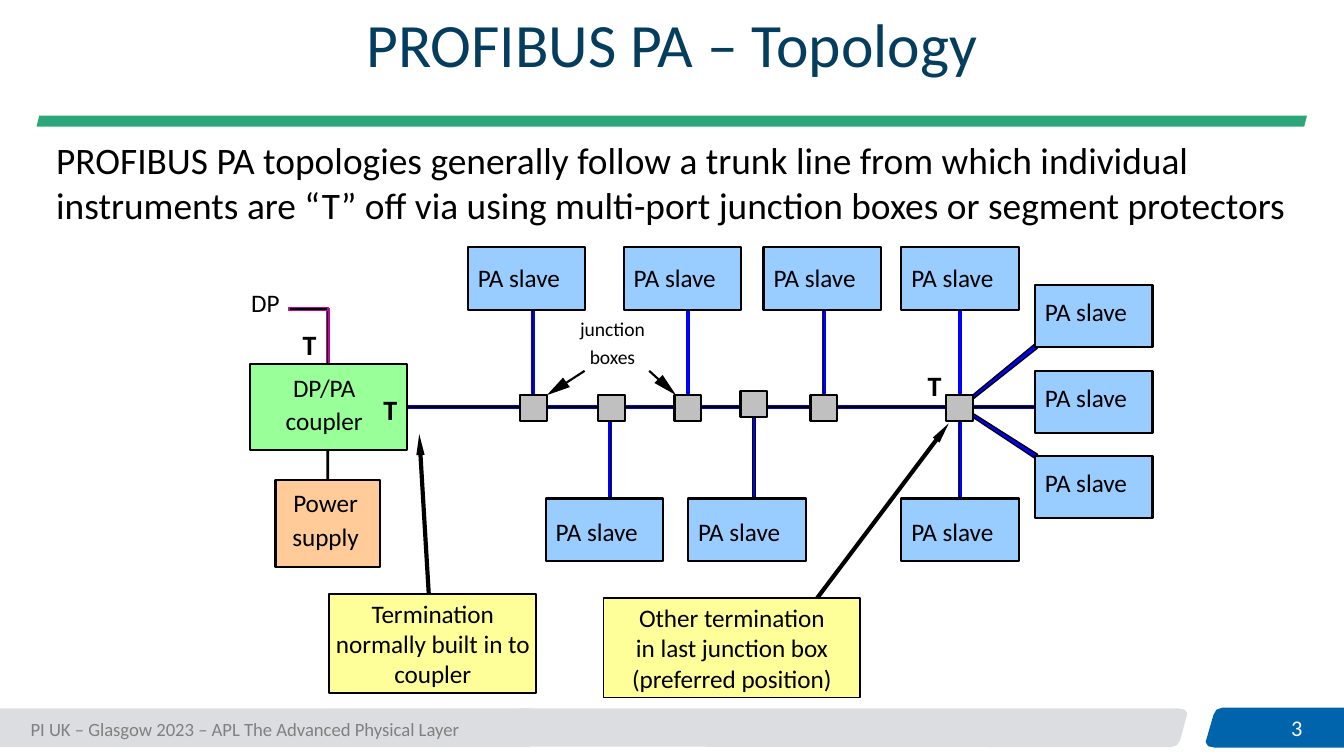
import pptx
import pptx.dml.color
import pptx.enum.shapes
import pptx.enum.text
import pptx.oxml.ns
import pptx.util
from lxml import etree

Pt = pptx.util.Pt
RGB = pptx.dml.color.RGBColor
SHAPE = pptx.enum.shapes.MSO_SHAPE
ALIGN = pptx.enum.text.PP_ALIGN
ANCHOR = pptx.enum.text.MSO_ANCHOR

BLACK = RGB(0x00, 0x00, 0x00)
WHITE = RGB(0xFF, 0xFF, 0xFF)
NAVY = RGB(0x04, 0x3D, 0x5D)
GREEN = RGB(0x2C, 0xA6, 0x7B)
BAR_GREY = RGB(0xDC, 0xDD, 0xE0)
BAR_BLUE = RGB(0x00, 0x64, 0xAD)
TEXT_GREY = RGB(0x80, 0x80, 0x80)
PA_BLUE = RGB(0x00, 0x00, 0xFF)
DP_PURPLE = RGB(0xB9, 0x09, 0x97)
SLAVE_BLUE = RGB(0x99, 0xCC, 0xFF)
COUPLER_GREEN = RGB(0x99, 0xFF, 0x99)
SUPPLY_ORANGE = RGB(0xFF, 0xCC, 0x99)
JUNCTION_GREY = RGB(0xC0, 0xC0, 0xC0)
NOTE_YELLOW = RGB(0xFF, 0xFF, 0x99)


class Painter:
    font = "Calibri"
    label_size = 13.5
    wire_width = 1.5
    outline = 1.13

    def __init__(self, page):
        self.page = page

    def paint(self, shape, fill, line=None, width=0.75):
        shape.shadow.inherit = False
        shape.fill.solid()
        shape.fill.fore_color.rgb = fill
        if line is None:
            shape.line.fill.background()
        else:
            shape.line.color.rgb = line
            shape.line.width = Pt(width)
        return shape

    def label(self, shape, lines, size, color=BLACK, bold=False, align=ALIGN.LEFT,
              anchor=ANCHOR.TOP, insets=(0, 0, 0, 0), wrap=True, gap=0, spacing=None):
        frame = shape.text_frame
        frame.word_wrap = wrap
        frame.vertical_anchor = anchor
        (frame.margin_left, frame.margin_top,
         frame.margin_right, frame.margin_bottom) = map(Pt, insets)
        for index, line in enumerate(lines):
            para = frame.paragraphs[0] if index == 0 else frame.add_paragraph()
            para.text = line
            para.alignment = align
            if index and gap:
                para.space_before = Pt(gap)
            if spacing:
                para.line_spacing = spacing
            para.font.name = self.font
            para.font.size = Pt(size)
            para.font.bold = bold
            para.font.color.rgb = color

    def text(self, left, top, width, height, lines, size, **style):
        box = self.page.shapes.add_textbox(Pt(left), Pt(top), Pt(width), Pt(height))
        self.label(box, lines, size, **style)

    def box(self, left, top, width, height, fill, line=None, line_width=outline,
            kind=SHAPE.RECTANGLE):
        shape = self.page.shapes.add_shape(kind, Pt(left), Pt(top), Pt(width), Pt(height))
        return self.paint(shape, fill, line, line_width)

    def wire(self, left, top, length, fill=BLACK, line=PA_BLUE, across=False):
        size = (length, self.wire_width) if across else (self.wire_width, length)
        self.box(left, top, *size, fill, line, 0.75)

    def polygon(self, points, fill, line=None):
        builder = self.page.shapes.build_freeform(
            Pt(points[0][0]), Pt(points[0][1]), scale=1.0)
        builder.add_line_segments([(Pt(x), Pt(y)) for x, y in points[1:]], close=True)
        self.paint(builder.convert_to_shape(), fill, line)

    def line(self, start, end, width, arrow=False):
        connector = self.page.shapes.add_connector(
            pptx.enum.shapes.MSO_CONNECTOR.STRAIGHT, *map(Pt, start + end))
        connector.line.color.rgb = BLACK
        connector.line.width = Pt(width)
        qn = pptx.oxml.ns.qn
        properties = connector._element.spPr
        if arrow:
            etree.SubElement(properties.find(qn("a:ln")), qn("a:tailEnd"),
                             type="triangle", w="sm", len="lg")
        etree.SubElement(properties, qn("a:effectLst"))

    def slave(self, left, top, text_top=8):
        shape = self.box(left, top, 63, 33.5, SLAVE_BLUE, BLACK)
        self.label(shape, ["PA slave"], self.label_size, insets=(5.4, text_top, 0, 0))

    def unit(self, left, top, width, height, fill, lines, insets):
        shape = self.box(left, top, width, height, fill, BLACK)
        self.label(shape, lines, self.label_size, align=ALIGN.CENTER,
                   insets=insets, gap=1.8)

    def junction(self, left, top=211.7):
        self.box(left, top, 14.4, 13.7, JUNCTION_GREY, BLACK)

    def terminator(self, left, top):
        self.text(left, top, 19.4, 26.6, ["T"], 15, bold=True, align=ALIGN.CENTER)

    def note(self, left, top, width, lines, start, end):
        shape = self.box(left, top, width, 53.3, NOTE_YELLOW, BLACK, 1)
        self.label(shape, lines, self.label_size, align=ALIGN.CENTER,
                   anchor=ANCHOR.MIDDLE, insets=(0.7, 0.7, 0.7, 0.7))
        self.line(start, end, 2.25, arrow=True)


deck = pptx.Presentation()
deck.slide_width, deck.slide_height = Pt(720), Pt(405)
painter = Painter(deck.slides.add_slide(deck.slide_layouts[6]))

# Footer bars, footer text and page number
painter.polygon([(278, 379.5), (631, 379.5), (634.5, 380.2), (636, 382), (635.8, 383.5),
                 (632.2, 396.7), (630.5, 399.3), (627, 400.3), (278, 400)], BAR_GREY)
painter.polygon([(655, 379.5), (720, 379.5), (720, 400.2), (651, 400.2), (647.5, 399.5),
                 (646.3, 397.5), (650.5, 383), (652, 380.5)], BAR_BLUE, BAR_BLUE)
painter.box(0, 379.5, 284, 20.8, BAR_GREY)
painter.text(662.4, 379.5, 42.5, 20.8, ["3"], 12, color=WHITE, align=ALIGN.RIGHT,
             anchor=ANCHOR.MIDDLE, insets=(7.2, 3.6, 7.2, 3.6))
painter.text(9.3, 381, 248, 19.4, ["PI UK – Glasgow 2023 – APL The Advanced Physical Layer"],
             10, color=TEXT_GREY, insets=(7.2, 3.6, 7.2, 3.6), wrap=False)

# Title, rule and introduction
painter.text(49.7, 9.4, 620.6, 32.4, ["PROFIBUS PA – Topology"], 33, color=NAVY,
             align=ALIGN.CENTER, anchor=ANCHOR.MIDDLE, spacing=0.9)
painter.box(19.6, 62, 680.6, 5.8, GREEN, kind=SHAPE.PARALLELOGRAM)
painter.text(23, 70, 697, 77.8,
             ["PROFIBUS PA topologies generally follow a trunk line from which individual "
              "instruments are “T” off via using multi-port junction boxes or segment protectors"],
             20, insets=(7.2, 3.6, 7.2, 3.6))

# DP feed and power wire
painter.wire(174.8, 165.3, 33.4, line=DP_PURPLE)
painter.wire(154.8, 164.9, 20.9, line=DP_PURPLE, across=True)
painter.wire(174.8, 238, 19, line=None)
painter.text(134.6, 154.1, 15.2, 16.6, ["DP"], painter.label_size, wrap=False)

# Trunk, upper spurs and lower spurs
painter.wire(217.4, 217.4, 337.7, across=True)
for left, fill in ((284.6, BLACK), (367.9, PA_BLUE), (440.6, BLACK), (513.4, PA_BLUE)):
    painter.wire(left, 165.6, 52.5, fill)
for left, fill, line in ((326.2, BLACK, PA_BLUE), (403.2, PA_BLUE, BLACK),
                         (513.4, BLACK, PA_BLUE)):
    painter.wire(left, 218, 52, fill, line)
painter.polygon([(514.1, 217.4), (514.8, 218.9), (555.8, 186.5), (554.4, 184.3)],
                PA_BLUE, BLACK)
painter.polygon([(554.4, 245.5), (555.8, 243.4), (514.8, 217.4), (514.1, 218.9)],
                PA_BLUE, BLACK)

# Coupler and power supply
painter.unit(133.9, 195.1, 84.2, 46.1, COUPLER_GREEN, ["DP/PA", "coupler"], (0, 4.3, 4.6, 0))
painter.unit(147.6, 257, 56.2, 46.8, SUPPLY_ORANGE, ["Power", "supply"], (0, 4.3, 2.6, 0))

# Slaves: upper row, lower row, right-hand column
for left in (250.6, 334.1, 409, 482.8):
    painter.slave(left, 132.5)
for left in (292.3, 368.6, 482.8):
    painter.slave(left, 267.1, 9.5)
for top in (152.6, 198.7, 244.1):
    painter.slave(554.4, top, 6.3)

# Junction boxes and their label
for left in (278.6, 320.4, 361.4, 434.2, 506.9):
    painter.junction(left)
painter.junction(396.7, 209.5)
painter.text(309.6, 169.6, 37, 28.4, ["junction", "boxes"], 10.5,
             align=ALIGN.CENTER, wrap=False, gap=2.4)
painter.line((313.2, 198.7), (301, 206.6), painter.outline)
painter.polygon([(301.7, 202.3), (293, 211.7), (305.3, 207.4)], BLACK)
painter.line((347.8, 198.7), (354.2, 204.5), painter.outline)
painter.polygon([(350.6, 205.2), (362.2, 211.7), (355, 200.9)], BLACK)

# Termination marks and notes
for left, top in ((491, 197.3), (199.4, 210.2), (156.2, 175.7)):
    painter.terminator(left, top)
painter.note(176.4, 318.2, 110.9, ["Termination", "normally built in to coupler"],
             (229.7, 318.2), (224.6, 232.6))
painter.note(323.3, 320.4, 137.5, ["Other termination", "in last junction box (preferred position)"],
             (437.8, 320.4), (508.3, 226.8))

deck.save("out.pptx")
